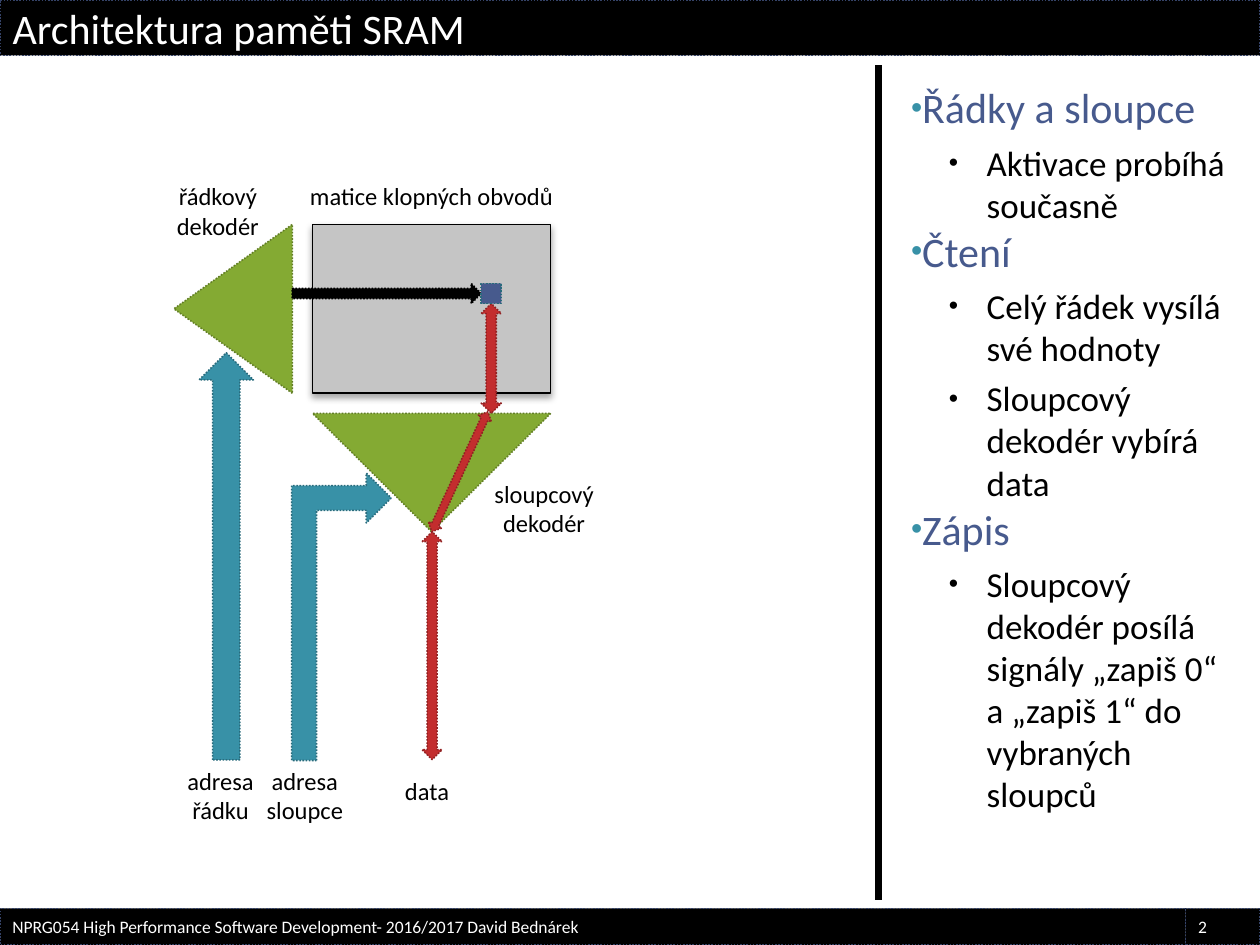
from dataclasses import dataclass

from lxml import etree
from pptx import Presentation
from pptx.dml.color import RGBColor
from pptx.enum import dml, shapes, text
from pptx.oxml import ns
from pptx.util import Pt


@dataclass(frozen=True)
class Theme:
    font: str = "Calibri"
    black: str = "000000"
    white: str = "FFFFFF"
    indigo: str = "475A8D"
    indigo_edge: str = "354368"
    teal: str = "3891A7"
    teal_edge: str = "296B7C"
    green: str = "84AA33"
    green_edge: str = "627E26"
    red: str = "C32D2E"
    red_edge: str = "902122"
    grey: str = "C5C5C5"
    heading_size: float = 24
    item_size: float = 20
    label_size: float = 14
    footer_size: float = 10
    edge_width: float = 0.9


@dataclass(frozen=True)
class Box:
    left: float
    top: float
    width: float
    height: float

    def lengths(self) -> tuple:
        return Pt(self.left), Pt(self.top), Pt(self.width), Pt(self.height)


@dataclass(frozen=True)
class Part:
    preset: shapes.MSO_SHAPE
    box: Box
    fill: str
    edge: str
    rotation: float = 0
    flipped: bool = False


@dataclass(frozen=True)
class Label:
    wording: str
    box: Box


@dataclass(frozen=True)
class Topic:
    heading: str
    items: tuple


THEME = Theme()
WIDTH, HEIGHT = 720, 540
FOOTER_TOP, NUMBER_LEFT = 519.1, 677.5
MATRIX = Box(178.6, 128.2, 136.1, 96.5)
CELL = Box(275, 162, 11.5, 11.5)
COLUMN_DECODER = Box(MATRIX.left, 236.2, MATRIX.width, 67.7)
CELL_BOTTOM = CELL.top + CELL.height
ROW_DECODER_RIGHT = 167

PRESET = shapes.MSO_SHAPE
PARTS = (
    Part(PRESET.ISOSCELES_TRIANGLE, Box(85, 142.6, MATRIX.height, 67.7), THEME.green, THEME.green_edge, 270),
    Part(PRESET.ISOSCELES_TRIANGLE, COLUMN_DECODER, THEME.green, THEME.green_edge, 180),
    Part(PRESET.RIGHT_ARROW, Box(13, 302.4, 232.6, 31), THEME.teal, THEME.teal_edge, 270),
    Part(PRESET.UP_DOWN_ARROW, Box(241.2, 303.8, CELL.width, 130.3), THEME.red, THEME.red_edge),
    Part(PRESET.RIGHT_ARROW, Box(ROW_DECODER_RIGHT, CELL.top, CELL.left - ROW_DECODER_RIGHT, CELL.height),
         THEME.black, THEME.black),
    Part(PRESET.UP_DOWN_ARROW, Box(CELL.left, CELL_BOTTOM, CELL.width, COLUMN_DECODER.top - CELL_BOTTOM),
         THEME.red, THEME.red_edge),
    Part(PRESET.BENT_UP_ARROW, Box(113, 324, 164.2, 56.9), THEME.teal, THEME.teal_edge, 90, True),
    Part(PRESET.UP_DOWN_ARROW, Box(258.5, 231.8, 8.6, 75.6), THEME.red, THEME.red_edge, 25),
    Part(PRESET.RECTANGLE, CELL, THEME.indigo, THEME.teal_edge),
)
LABELS = (
    Label("řádkový\vdekodér", Box(93.6, 100.1, 61.9, 41)),
    Label("sloupcový\vdekodér", Box(275, 270, 72, 41)),
    Label("adresa\vsloupce", Box(144.7, 434.2, 59, 41)),
    Label("adresa\vřádku", Box(99.4, 434.2, 53.3, 41)),
    Label("data", Box(223.9, 439.9, 40.3, 24.5)),
    Label("matice klopných obvodů", Box(169.2, 100.1, 154.8, 24.5)),
)
TOPICS = (
    Topic("Řádky a sloupce", ("Aktivace probíhá současně",)),
    Topic("Čtení", ("Celý řádek vysílá své hodnoty", "Sloupcový dekodér vybírá data")),
    Topic("Zápis", ("Sloupcový dekodér posílá signály „zapiš 0“ a „zapiš 1“ do vybraných sloupců",)),
)


def add_element(parent, tag: str, **attributes):
    element = etree.SubElement(parent, ns.qn(tag))
    for name, value in attributes.items():
        element.set(name, str(value))
    return element


def place(shape, box: Box) -> None:
    shape.left, shape.top, shape.width, shape.height = box.lengths()


def paint(shape, fill: str, edge: str, width: float = THEME.edge_width, dashed: bool = True) -> None:
    shape.shadow.inherit = False
    shape.fill.solid()
    shape.fill.fore_color.rgb = RGBColor.from_string(fill)
    shape.line.color.rgb = RGBColor.from_string(edge)
    shape.line.width = Pt(width)
    if dashed:
        shape.line.dash_style = dml.MSO_LINE.ROUND_DOT


def format_runs(paragraph, size: float, color: str) -> None:
    for run in paragraph.runs:
        run.font.name = THEME.font
        run.font.size = Pt(size)
        run.font.color.rgb = RGBColor.from_string(color)


def write_bar(shape, wording: str, size: float) -> None:
    paint(shape, THEME.black, THEME.indigo_edge)
    frame = shape.text_frame
    frame.text = wording
    frame.auto_size = text.MSO_AUTO_SIZE.NONE
    frame.vertical_anchor = text.MSO_ANCHOR.MIDDLE
    frame.paragraphs[0].alignment = text.PP_ALIGN.LEFT
    format_runs(frame.paragraphs[0], size, THEME.white)


def add_part(slide, part: Part):
    shape = slide.shapes.add_shape(part.preset, *part.box.lengths())
    paint(shape, part.fill, part.edge)
    shape.rotation = part.rotation
    if part.flipped:
        shape.element.spPr.find(ns.qn("a:xfrm")).set("flipH", "1")
    return shape


def add_matrix(slide) -> None:
    shape = slide.shapes.add_shape(PRESET.RECTANGLE, *MATRIX.lengths())
    paint(shape, THEME.grey, THEME.black, 0.75, dashed=False)
    effects = shape.element.spPr.find(ns.qn("a:effectLst"))
    shadow = add_element(effects, "a:outerShdw", blurRad=Pt(4), dist=Pt(2), dir=90 * 60000, rotWithShape=0)
    color = add_element(shadow, "a:srgbClr", val=THEME.black)
    add_element(color, "a:alpha", val=35000)


def add_label(slide, label: Label) -> None:
    frame = slide.shapes.add_textbox(*label.box.lengths()).text_frame
    frame.word_wrap = False
    frame.auto_size = text.MSO_AUTO_SIZE.SHAPE_TO_FIT_TEXT
    frame.text = label.wording
    frame.paragraphs[0].alignment = text.PP_ALIGN.CENTER
    format_runs(frame.paragraphs[0], THEME.label_size, THEME.black)


def add_divider(slide) -> None:
    x = Pt(501.8)
    line = slide.shapes.add_connector(shapes.MSO_CONNECTOR.STRAIGHT, x, Pt(37.4), x, Pt(514.1))
    line.line.color.rgb = RGBColor.from_string(THEME.black)
    line.line.width = Pt(4)
    add_element(line.element.spPr, "a:effectLst")


def format_bullet(paragraph, level: int) -> None:
    paragraph.level = level
    paragraph.space_before = Pt(5 * level)
    properties = paragraph._p.get_or_add_pPr()
    properties.set("marL", str(Pt(43.2 * level)))
    properties.set("indent", str(Pt(-21.6 * level)))
    color = add_element(properties, "a:buClr")
    add_element(color, "a:srgbClr", val=THEME.black if level else THEME.teal)
    add_element(properties, "a:buSzPct", val=76000)
    add_element(properties, "a:buFont", typeface="Arial")
    add_element(properties, "a:buChar", char="•")
    size, ink = (THEME.item_size, THEME.black) if level else (THEME.heading_size, THEME.indigo)
    format_runs(paragraph, size, ink)


def write_topics(shape) -> None:
    place(shape, Box(513.4, 43.2, 198.7, 465.1))
    entries = [entry for topic in TOPICS
               for entry in ((topic.heading, 0), *((item, 1) for item in topic.items))]
    frame = shape.text_frame
    frame.text = "\n".join(wording for wording, _ in entries)
    frame.auto_size = text.MSO_AUTO_SIZE.NONE
    for paragraph, (_, level) in zip(frame.paragraphs, entries):
        format_bullet(paragraph, level)


def main() -> None:
    presentation = Presentation()
    presentation.slide_width, presentation.slide_height = Pt(WIDTH), Pt(HEIGHT)
    slide = presentation.slides.add_slide(presentation.slide_layouts[1])
    add_divider(slide)
    write_topics(slide.placeholders[1])
    place(slide.shapes.title, Box(0, 0, WIDTH, 31.7))
    write_bar(slide.shapes.title, "Architektura paměti SRAM", THEME.heading_size)
    footer = "NPRG054 High Performance Software Development- 2016/2017 David Bednárek"
    for wording, left, right in (("2", NUMBER_LEFT, WIDTH), (footer, 0, NUMBER_LEFT)):
        box = Box(left, FOOTER_TOP, right - left, HEIGHT - FOOTER_TOP)
        bar = slide.shapes.add_shape(PRESET.RECTANGLE, *box.lengths())
        write_bar(bar, wording, THEME.footer_size)
    add_matrix(slide)
    for part in PARTS:
        add_part(slide, part)
    for label in LABELS:
        add_label(slide, label)
    presentation.save("out.pptx")


if __name__ == "__main__":
    main()
